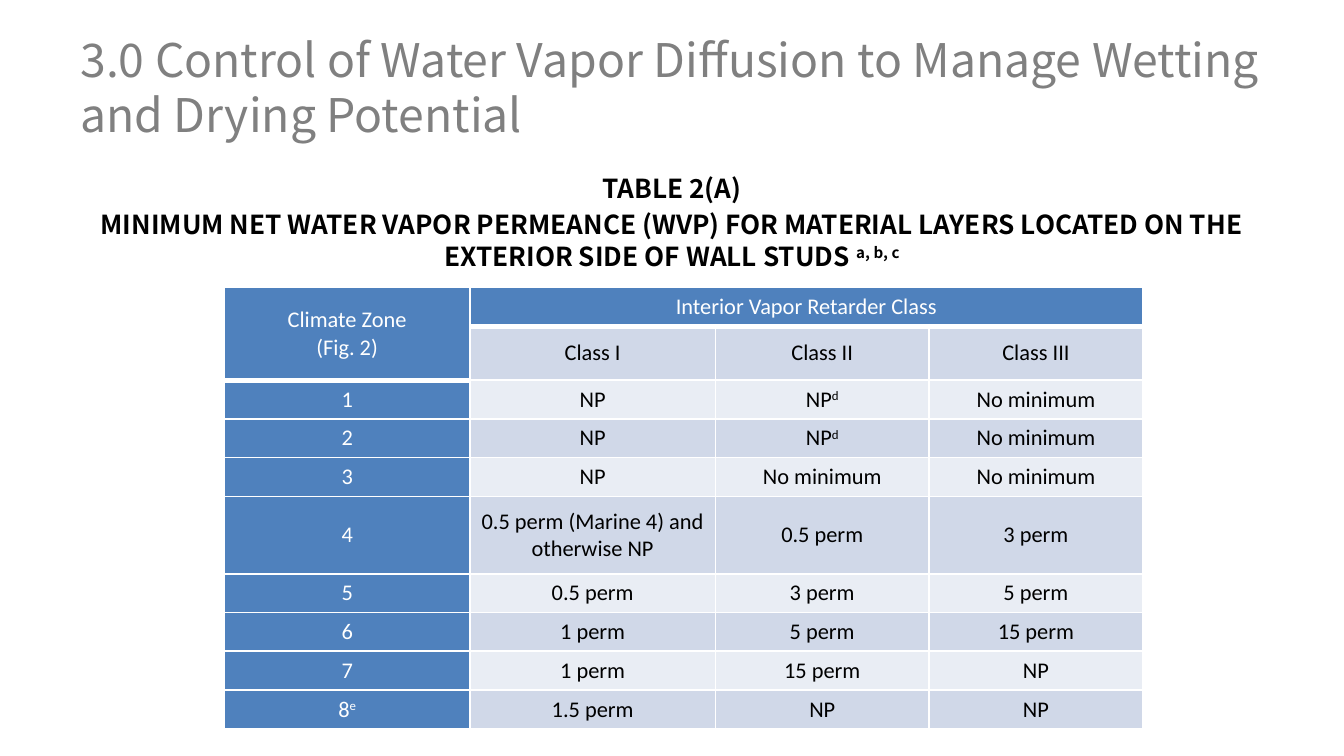
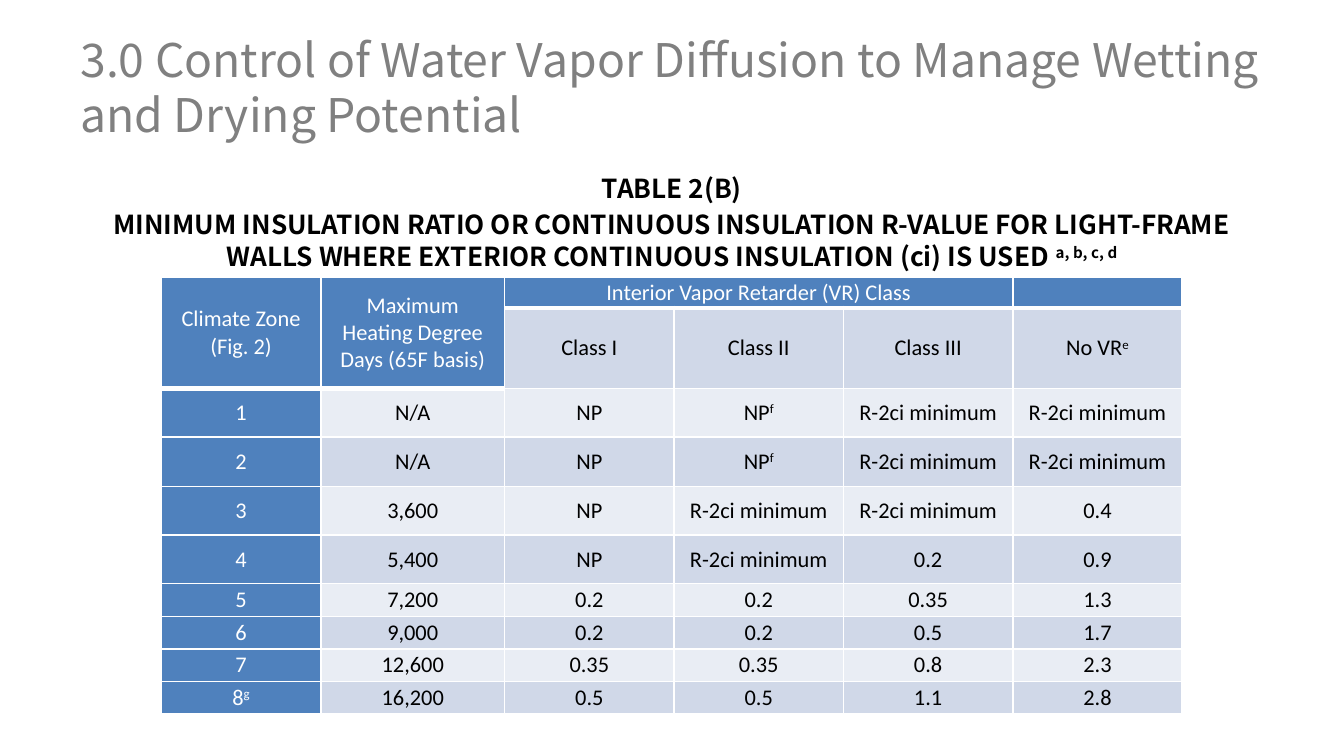
"""Build two slides with tables on water vapor control in walls."""
import pptx
import pptx.dml.color
import pptx.enum.text
import pptx.oxml
import pptx.oxml.ns
import pptx.util

Pt = pptx.util.Pt
ALIGN = pptx.enum.text.PP_ALIGN
ANCHOR = pptx.enum.text.MSO_ANCHOR

BLUE, DARK_BAND, LIGHT_BAND = "4F81BD", "D0D8E8", "E9EDF4"
WHITE, BLACK, GRAY = "FFFFFF", "000000", "808080"
TITLE = "3.0 Control of Water Vapor Diffusion to Manage Wetting and Drying Potential"
TITLE_FONT = {"name": "Noto Sans CJK JP", "size": Pt(24.8), "bold": False}
CAPTION_FONT = {"name": "Noto Sans CJK JP", "size": Pt(14), "bold": True}
CELL_FONT = {"name": "Calibri", "size": Pt(12), "bold": False}
TITLE_PARA = {"alignment": ALIGN.LEFT, "line_spacing": Pt(29.5)}
CAPTION_PARA = {"alignment": ALIGN.CENTER, "line_spacing": Pt(17.1)}
CELL_PARA = {"alignment": ALIGN.CENTER}
CELL_FORMAT = {
    "margin_left": Pt(5), "margin_right": Pt(5), "margin_top": 0,
    "margin_bottom": 0, "vertical_anchor": ANCHOR.MIDDLE,
}

SLIDES = [
    {
        "caption": "TABLE 2(A)\nMINIMUM NET WATER VAPOR PERMEANCE (WVP) FOR MATERIAL LAYERS "
                   "LOCATED ON THE EXTERIOR SIDE OF WALL STUDS ^a, b, c",
        "left": 120.25, "top": 154.1,
        "widths": [131.5, 131.5, 114.5, 114.5],
        "heights": [20.75] * 5 + [41.5] + [20.75] * 4,
        "merges": [(0, 0, 1, 0), (0, 1, 0, 3)],
        "cells": [
            ["Climate Zone\n(Fig. 2)", "Interior Vapor Retarder Class", "", ""],
            ["", "Class I", "Class II", "Class III"],
            ["1", "NP", "NP^d", "No minimum"],
            ["2", "NP", "NP^d", "No minimum"],
            ["3", "NP", "No minimum", "No minimum"],
            ["4", "0.5 perm (Marine 4) and otherwise NP", "0.5 perm", "3 perm"],
            ["5", "0.5 perm", "3 perm", "5 perm"],
            ["6", "1 perm", "5 perm", "15 perm"],
            ["7", "1 perm", "15 perm", "NP"],
            ["8^e", "1.5 perm", "NP", "NP"],
        ],
    },
    {
        "caption": "TABLE 2(B)\nMINIMUM INSULATION RATIO OR CONTINUOUS INSULATION R-VALUE FOR "
                   "LIGHT-FRAME WALLS WHERE EXTERIOR CONTINUOUS INSULATION (ci) IS USED ^a, b, c, d",
        "left": 86.4, "top": 148.5,
        "widths": [85.5, 98.5] + [90.75] * 4,
        "heights": [16.5, 36, 26, 26.5, 26, 26] + [17.5] * 4,
        "merges": [(0, 0, 1, 0), (0, 1, 1, 1), (0, 2, 0, 4)],
        "cells": [
            ["Climate Zone\n(Fig. 2)", "Maximum Heating Degree Days (65F basis)",
             "Interior Vapor Retarder (VR) Class", "", "", ""],
            ["", "", "Class I", "Class II", "Class III", "No VR^e"],
            ["1", "N/A", "NP", "NP^f", "R-2ci minimum", "R-2ci minimum"],
            ["2", "N/A", "NP", "NP^f", "R-2ci minimum", "R-2ci minimum"],
            ["3", "3,600", "NP", "R-2ci minimum", "R-2ci minimum", "0.4"],
            ["4", "5,400", "NP", "R-2ci minimum", "0.2", "0.9"],
            ["5", "7,200", "0.2", "0.2", "0.35", "1.3"],
            ["6", "9,000", "0.2", "0.2", "0.5", "1.7"],
            ["7", "12,600", "0.35", "0.35", "0.8", "2.3"],
            ["8^g", "16,200", "0.5", "0.5", "1.1", "2.8"],
        ],
    },
]


def color(value):
    return pptx.dml.color.RGBColor.from_string(value)


def write_text(frame, text, font_format, para_format, font_color, space_before=0):
    for index, line in enumerate(text.split("\n")):
        para = frame.add_paragraph() if index else frame.paragraphs[0]
        for name, value in para_format.items():
            setattr(para, name, value)
        if index:
            para.space_before = Pt(space_before)
        for part, words in enumerate(line.split("^")):
            if not words:
                end = para._p.get_or_add_endParaRPr()
                end.set("sz", str(int(font_format["size"].pt * 100)))
                continue
            span = para.add_run()
            span.text = words
            for name, value in font_format.items():
                setattr(span.font, name, value)
            span.font.color.rgb = color(font_color)
            if part:
                span.font._element.set("baseline", "30000")


deck = pptx.Presentation()
deck.slide_width, deck.slide_height = Pt(720), Pt(405)

for content in SLIDES:
    page = deck.slides.add_slide(deck.slide_layouts[6])

    title_box = page.shapes.add_textbox(Pt(36), Pt(12.25), Pt(648), Pt(64.8))
    title_format = {"word_wrap": True, "vertical_anchor": ANCHOR.MIDDLE, "margin_top": Pt(7.2)}
    for name, value in title_format.items():
        setattr(title_box.text_frame, name, value)
    write_text(title_box.text_frame, TITLE, TITLE_FONT, TITLE_PARA, GRAY)

    caption_box = page.shapes.add_textbox(Pt(36), Pt(88.6), Pt(648), Pt(234))
    caption_box.text_frame.word_wrap = True
    write_text(caption_box.text_frame, content["caption"], CAPTION_FONT, CAPTION_PARA, BLACK, 2)

    widths, heights = content["widths"], content["heights"]
    table = page.shapes.add_table(
        len(heights), len(widths), Pt(content["left"]), Pt(content["top"]),
        Pt(sum(widths)), Pt(sum(heights))).table
    table.first_row = table.horz_banding = False
    for column, width in zip(table.columns, widths):
        column.width = Pt(width)
    for row, height in zip(table.rows, heights):
        row.height = Pt(height)

    for row_index, texts in enumerate(content["cells"]):
        for column_index, text in enumerate(texts):
            cell = table.cell(row_index, column_index)
            is_header = row_index == 0 or column_index == 0
            band = DARK_BAND if row_index % 2 else LIGHT_BAND
            for name, value in CELL_FORMAT.items():
                setattr(cell, name, value)
            write_text(cell.text_frame, text, CELL_FONT, CELL_PARA, WHITE if is_header else BLACK)
            properties = cell._tc.get_or_add_tcPr()
            for side in ("lnL", "lnR", "lnT", "lnB"):
                weight = 3 if row_index == 0 and side == "lnB" else 1
                properties.append(pptx.oxml.parse_xml(
                    f'<a:{side} {pptx.oxml.ns.nsdecls("a")} w="{Pt(weight)}">'
                    f'<a:solidFill><a:srgbClr val="{WHITE}"/></a:solidFill></a:{side}>'))
            cell.fill.solid()
            cell.fill.fore_color.rgb = color(BLUE if is_header else band)

    for top, left, bottom, right in content["merges"]:
        table.cell(top, left).merge(table.cell(bottom, right))

deck.save("out.pptx")
